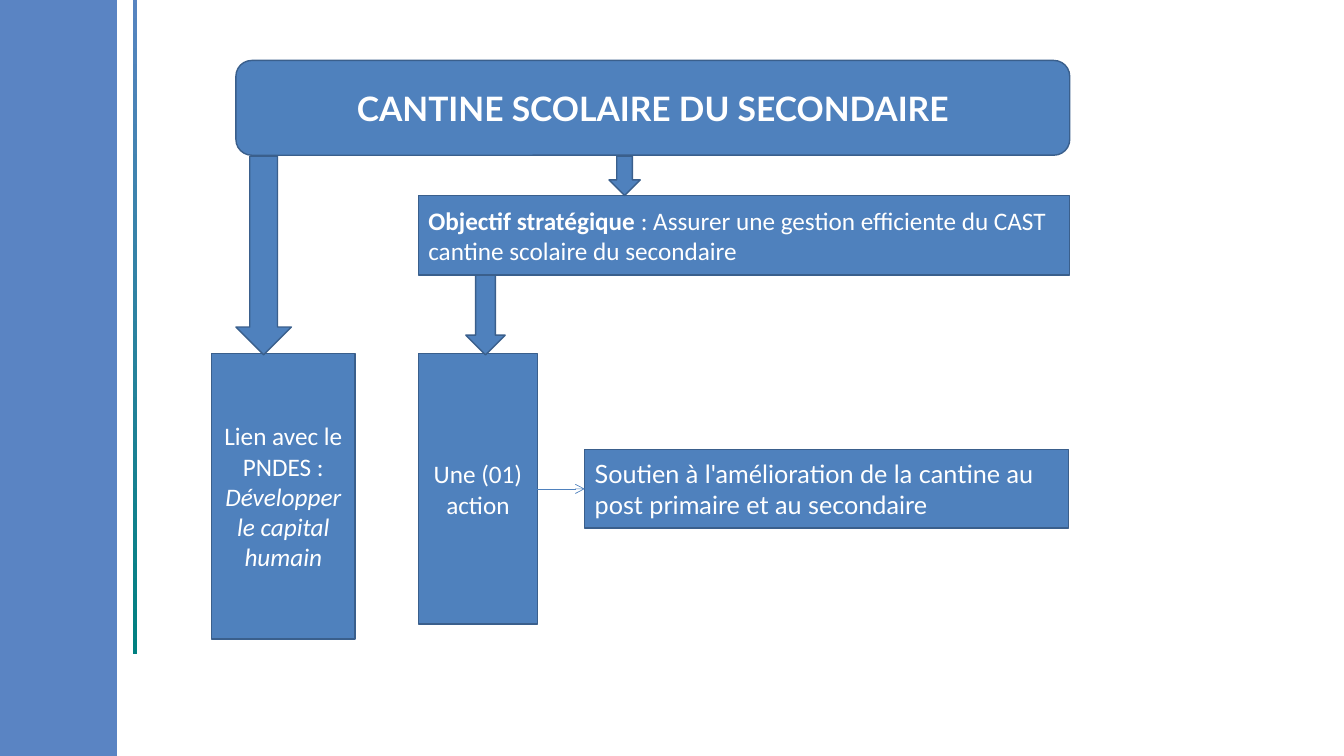
"""Builds the slide on the secondary school canteen programme."""
from lxml import etree
from pptx import Presentation
from pptx.dml.color import RGBColor
from pptx.enum.shapes import MSO_CONNECTOR, MSO_SHAPE
from pptx.enum.text import MSO_ANCHOR, PP_ALIGN
from pptx.oxml.ns import qn
from pptx.util import Inches, Pt

RECTANGLE = MSO_SHAPE.RECTANGLE
ROUNDED = MSO_SHAPE.ROUNDED_RECTANGLE
DOWN_ARROW = MSO_SHAPE.DOWN_ARROW
STRAIGHT = MSO_CONNECTOR.STRAIGHT
LEFT, CENTER = PP_ALIGN.LEFT, PP_ALIGN.CENTER
MIDDLE = MSO_ANCHOR.MIDDLE
LEFT_SIDE, RIGHT_SIDE = 1, 3


def color(value):
    return RGBColor.from_string(value)


class Diagram:
    fill, outline, ink = "4F81BD", "3A5F8C", "FFFFFF"
    band, teal = "5A84C3", "008080"

    def __init__(self, page):
        self.page = page

    def shape(self, kind, place):
        shape = self.page.shapes.add_shape(kind, *map(Inches, place))
        shape.shadow.inherit = False
        shape.fill.solid()
        shape.fill.fore_color.rgb = color(self.fill)
        shape.line.color.rgb = color(self.outline)
        shape.line.width = Pt(1)
        return shape

    def side_band(self, place):
        band = self.shape(RECTANGLE, place)
        band.fill.fore_color.rgb = color(self.band)
        band.line.fill.background()
        return band

    def gradient_stripe(self, place):
        stripe = self.side_band(place)
        stripe.fill.gradient()
        stripe.fill.gradient_angle = 270
        for stop, value in zip(stripe.fill.gradient_stops, (self.band, self.teal)):
            stop.color.rgb = color(value)

    def box(self, place, spans, kind=RECTANGLE, font="Calibri", size=18, align=CENTER):
        box = self.shape(kind, place)
        frame = box.text_frame
        frame.word_wrap = True
        frame.vertical_anchor = MIDDLE
        paragraph = frame.paragraphs[0]
        paragraph.alignment = align
        for text, bold, italic in spans:
            span = paragraph.add_run()
            span.text = text
            span.font.name = font
            span.font.size = Pt(size)
            span.font.bold = bold
            span.font.italic = italic
            span.font.color.rgb = color(self.ink)
        return box

    def link(self, start, end):
        line = self.page.shapes.add_connector(STRAIGHT, 0, 0, 0, 0)
        line.begin_connect(start, RIGHT_SIDE)
        line.end_connect(end, LEFT_SIDE)
        line.line.color.rgb = color(self.fill)
        line.line.width = Pt(0.5)
        etree.SubElement(line.line._get_or_add_ln(), qn("a:tailEnd"), type="arrow")
        etree.SubElement(line._element.spPr, qn("a:effectLst"))


def main():
    deck = Presentation()
    deck.slide_width, deck.slide_height = Inches(13.33), Inches(7.5)
    diagram = Diagram(deck.slides.add_slide(deck.slide_layouts[6]))

    diagram.side_band((-0.11, -0.15, 1.27, 7.85))
    diagram.gradient_stripe((1.32, -0.27, 0.04, 6.76))

    diagram.box((2.34, 0.6, 8.27, 0.94),
                [("CANTINE SCOLAIRE DU SECONDAIRE", True, False)],
                kind=ROUNDED, font="Lato", size=24)
    diagram.box((4.15, 1.94, 6.46, 0.79),
                [("Objectif stratégique ", True, False),
                 (": Assurer une gestion efficiente du CAST cantine scolaire du secondaire",
                  False, False)], align=LEFT)
    support = diagram.box((5.8, 4.46, 4.8, 0.78),
                          [("Soutien à l'amélioration de la cantine au post primaire "
                            "et au secondaire", False, False)],
                          font="Lato", align=LEFT)
    diagram.box((2.1, 3.51, 1.42, 2.83),
                [("Lien avec le PNDES : ", False, False),
                 ("Développer le capital humain", False, True)])
    action = diagram.box((4.15, 3.51, 1.18, 2.68), [("Une (01) action", False, False)])

    for place in ((2.34, 1.55, 0.55, 1.97),
                  (6.04, 1.55, 0.31, 0.39),
                  (4.62, 2.73, 0.39, 0.79)):
        diagram.shape(DOWN_ARROW, place)
    diagram.link(action, support)

    deck.save("out.pptx")


if __name__ == "__main__":
    main()
